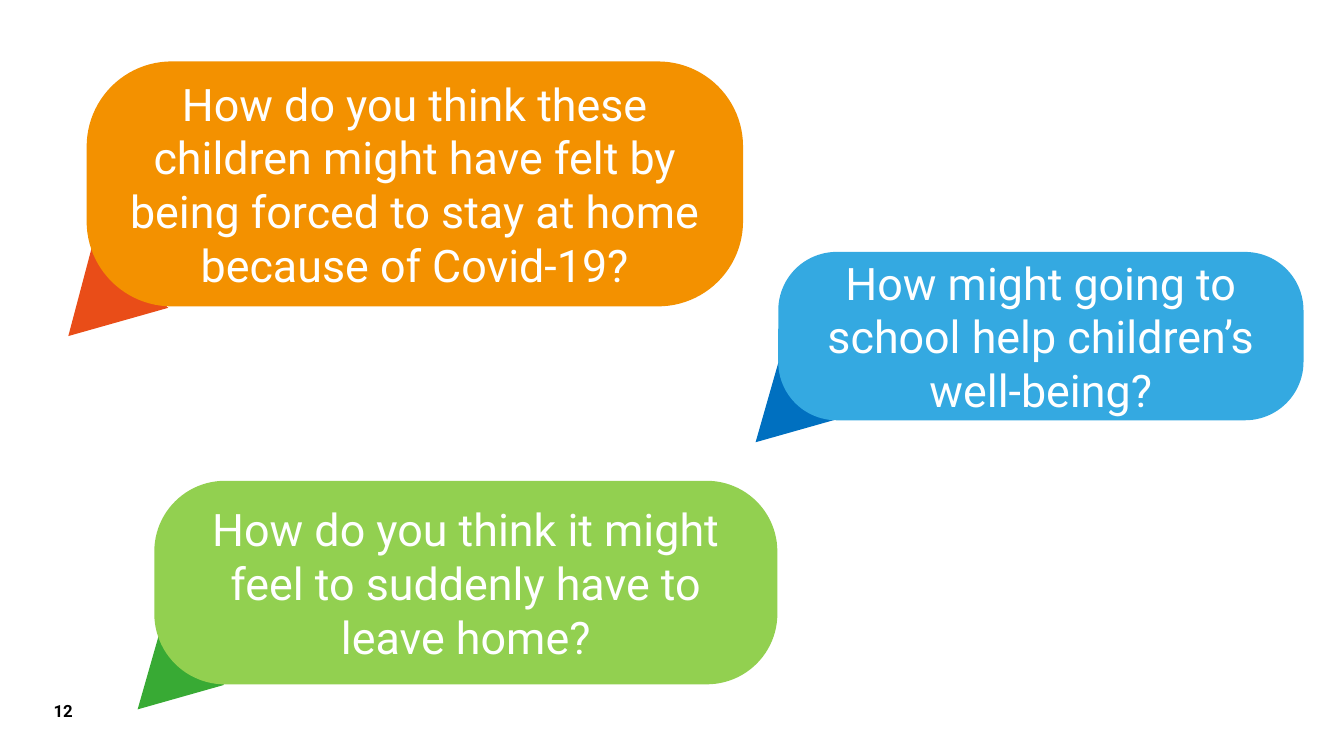
from pptx import Presentation
from pptx import util as u
from pptx.dml.color import RGBColor
from pptx.enum import shapes, text

WIDTH, HEIGHT = 13.33, 7.5
FONT = "Roboto"
CORNER = 0.347
TAIL_ANGLE = 344.2

# Boxes are left, top, width, height in percent of the slide
BUBBLES = [
    {"words": "How do you think these children might have felt by being "
              "forced to stay at home because of Covid-19?",
     "box": (6.45, 8.13, 48.84, 32.4), "fill": "F39100",
     "tail": (4.05, 31.2, 7.73, 11.6), "tail_fill": "E94D18"},
    {"words": "How do you think it might feel to suddenly have to leave home?",
     "box": (11.48, 63.6, 46.36, 26.93), "fill": "92D050",
     "tail": (9.38, 82.8, 6.68, 9.6), "tail_fill": "38AA34"},
    {"words": "How might going to school help children’s well-being?",
     "box": (57.91, 33.33, 39.08, 22.27), "fill": "34A9E1",
     "tail": (55.36, 47.47, 6.68, 9.6), "tail_fill": "0070C0"},
]
PAGE_NUMBER = "12"
PAGE_BOX = (3.98, 91.07, 5.48, 4.27)

QUESTION_FONT = {"name": FONT, "size": u.Pt(32), "bold": False}
PAGE_FONT = {"name": FONT, "size": u.Pt(12), "bold": True}
PAGE_FRAME = {"margin_left": 0, "margin_top": 0, "margin_right": 0,
              "margin_bottom": 0, "vertical_anchor": text.MSO_ANCHOR.BOTTOM}
QUESTION_FRAME = {"vertical_anchor": text.MSO_ANCHOR.MIDDLE}


def rgb(value):
    return RGBColor.from_string(value)


def place(box):
    """Turn percentages of the slide into lengths."""
    return [u.Inches(share * side / 100)
            for share, side in zip(box, (WIDTH, HEIGHT) * 2)]


def add_filled(slide, kind, box, fill):
    sp = slide.shapes.add_shape(kind, *place(box))
    sp.shadow.inherit = False
    sp.fill.solid()
    sp.fill.fore_color.rgb = rgb(fill)
    sp.line.fill.background()
    return sp


def write(sp, words, frame, font, color, align):
    tf = sp.text_frame
    tf.word_wrap = True
    for name, value in frame.items():
        setattr(tf, name, value)
    p = tf.paragraphs[0]
    p.alignment = align
    r = p.add_run()
    r.text = words
    for name, value in font.items():
        setattr(r.font, name, value)
    r.font.color.rgb = rgb(color)


def main():
    prs = Presentation()
    prs.slide_width, prs.slide_height = u.Inches(WIDTH), u.Inches(HEIGHT)
    slide = prs.slides.add_slide(prs.slide_layouts[6])

    for bubble in BUBBLES:
        tail = add_filled(slide, shapes.MSO_SHAPE.ISOSCELES_TRIANGLE,
                          bubble["tail"], bubble["tail_fill"])
        tail.rotation = TAIL_ANGLE
        sp = add_filled(slide, shapes.MSO_SHAPE.ROUNDED_RECTANGLE,
                        bubble["box"], bubble["fill"])
        sp.adjustments[0] = CORNER
        write(sp, bubble["words"], QUESTION_FRAME, QUESTION_FONT,
              "FFFFFF", text.PP_ALIGN.CENTER)

    number = slide.shapes.add_textbox(*place(PAGE_BOX))
    write(number, PAGE_NUMBER, PAGE_FRAME, PAGE_FONT,
          "000000", text.PP_ALIGN.LEFT)
    prs.save("out.pptx")


if __name__ == "__main__":
    main()
